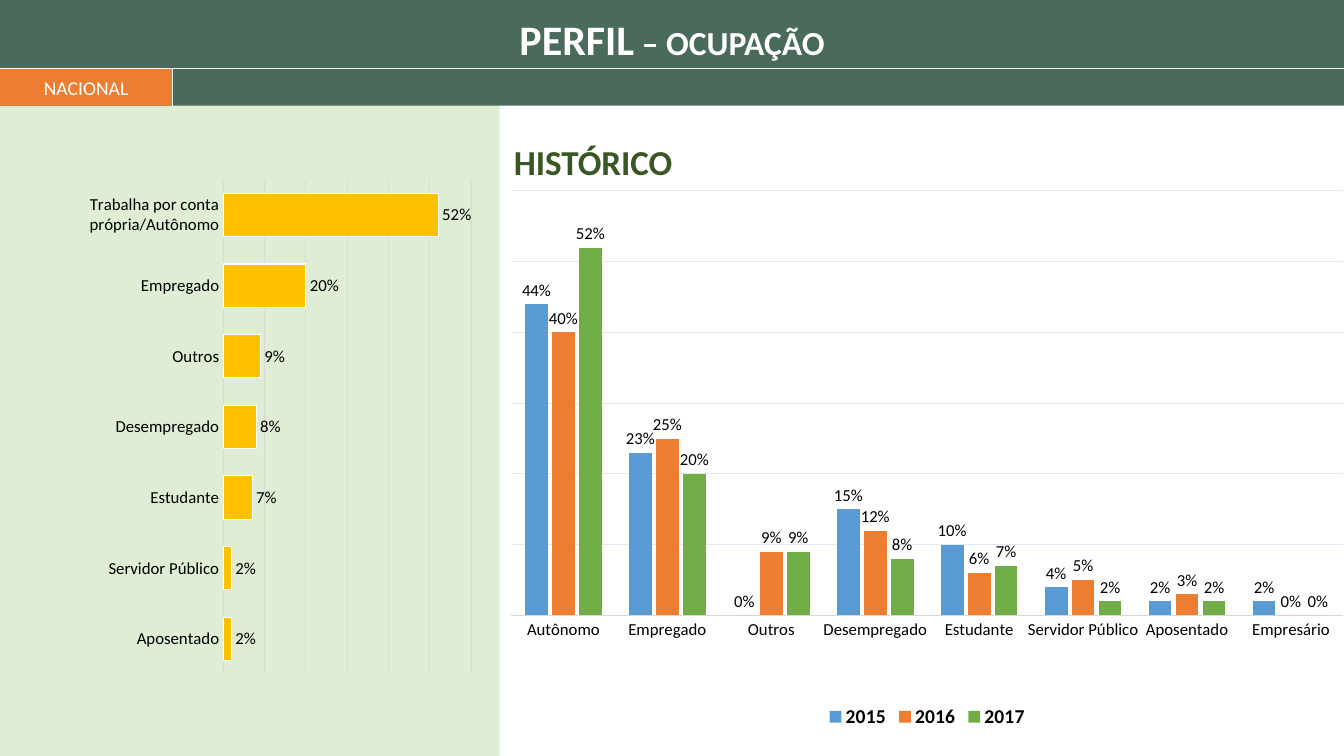
import pptx
import pptx.chart.data
import pptx.dml.color
import pptx.enum.chart
import pptx.enum.shapes
import pptx.enum.text
import pptx.oxml
import pptx.oxml.ns
import pptx.util
import lxml.etree

Pt = pptx.util.Pt
Align = pptx.enum.text.PP_ALIGN
Kind = pptx.enum.chart.XL_CHART_TYPE

TINTS = {
    "panel": "C5E0B4", "band": "4A6A5C", "tag": "ED7D31", "white": "FFFFFF",
    "rule": "F2F2F2", "head": "385723", "black": "000000", "axis": "D9D9D9",
    "grid": "DEEBF7", "gold": "FFC000", "blue": "5B9BD5", "green": "70AD47",
}


class Deck:
    font = "Calibri"

    def __init__(self, width, height):
        self.show = pptx.Presentation()
        self.show.slide_width, self.show.slide_height = Pt(width), Pt(height)
        self.slide = self.show.slides.add_slide(self.show.slide_layouts[6])

    def tint(self, name):
        return pptx.dml.color.RGBColor.from_string(TINTS[name])

    def style(self, font, size, tint, bold=False):
        font.name, font.size, font.bold = self.font, Pt(size), bold
        font.color.rgb = self.tint(tint)

    def fill(self, form, tint):
        form.fill.solid()
        form.fill.fore_color.rgb = self.tint(tint)

    def stroke(self, line, tint, width=0.75):
        line.color.rgb = self.tint(tint)
        line.width = Pt(width)

    def letter(self, frame, parts, tint, align, bold=False):
        para = frame.paragraphs[0]
        para.alignment = align
        for text, size in parts:
            run = para.add_run()
            run.text = text
            self.style(run.font, size, tint, bold)

    def block(self, box, tint, alpha=None):
        rect = self.slide.shapes.add_shape(
            pptx.enum.shapes.MSO_SHAPE.RECTANGLE, *map(Pt, box))
        rect.shadow.inherit = False
        rect.line.fill.background()
        self.fill(rect, tint)
        if alpha:
            color = rect.element.xpath("./p:spPr/a:solidFill/a:srgbClr")[0]
            lxml.etree.SubElement(color, pptx.oxml.ns.qn("a:alpha"), val=str(alpha * 1000))
        return rect

    def label(self, box, parts, tint, align):
        frame = self.slide.shapes.add_textbox(*map(Pt, box)).text_frame
        frame.word_wrap = True
        frame.auto_size = pptx.enum.text.MSO_AUTO_SIZE.SHAPE_TO_FIT_TEXT
        self.letter(frame, parts, tint, align, True)

    def rule(self, ends, tint, width):
        line = self.slide.shapes.add_connector(
            pptx.enum.shapes.MSO_CONNECTOR.STRAIGHT, *map(Pt, ends))
        self.stroke(line.line, tint, width)
        lxml.etree.SubElement(line.element.spPr, pptx.oxml.ns.qn("a:effectLst"))

    def chart(self, kind, box, groups, rows, gap, lap, grid, area, edge=None):
        data = pptx.chart.data.CategoryChartData(number_format="0%")
        data.categories = groups
        for name, tint, values in rows:
            data.add_series(name, values)
        chart = self.slide.shapes.add_chart(kind, *map(Pt, box), data).chart
        chart.has_title = False
        chart.has_legend = False
        self.style(chart.font, 10, "black")

        plot = chart.plots[0]
        plot.gap_width, plot.overlap, plot.vary_by_categories = gap, lap, False
        for bars, (name, tint, values) in zip(plot.series, rows):
            self.fill(bars.format, tint)
            bars.invert_if_negative = False
            if edge:
                self.stroke(bars.format.line, edge)
            marks = bars.data_labels
            marks.show_value = True
            marks.number_format, marks.number_format_is_linked = "0%", False
            marks.position = pptx.enum.chart.XL_LABEL_POSITION.OUTSIDE_END
            self.style(marks.font, 12, "black")

        names, scale = chart.category_axis, chart.value_axis
        names.major_tick_mark = pptx.enum.chart.XL_TICK_MARK.NONE
        names.has_major_gridlines = False
        self.style(names.tick_labels.font, 12, "black")
        self.stroke(names.format.line, "axis")
        scale.minimum_scale, scale.maximum_scale, scale.major_unit = 0, 0.6, 0.1
        scale.has_major_gridlines = True
        self.stroke(scale.major_gridlines.format.line, grid)
        scale.tick_labels.number_format = "0%"
        scale.tick_labels.number_format_is_linked = False
        scale.visible = False
        self.place(chart, area)
        return chart

    def place(self, chart, area):
        root = chart.element.xpath("//c:plotArea")[0]
        for old in root.xpath("./c:layout"):
            root.remove(old)
        pairs = [("layoutTarget", "inner"), ("xMode", "edge"), ("yMode", "edge")]
        pairs += zip("xywh", area)
        inner = "".join(f'<c:{tag} val="{value}"/>' for tag, value in pairs)
        root.insert(0, pptx.oxml.parse_xml(
            f'<c:layout {pptx.oxml.ns.nsdecls("c")}>'
            f"<c:manualLayout>{inner}</c:manualLayout></c:layout>"))

    def legend(self, chart):
        chart.has_legend = True
        chart.legend.position = pptx.enum.chart.XL_LEGEND_POSITION.BOTTOM
        chart.legend.include_in_layout = False
        self.style(chart.legend.font, 14, "black", True)


def main():
    wide, high, band, split, tag = 960, 540, 75.5, 49, 123
    deck = Deck(wide, high)
    deck.block((0, 0, 357, high), "panel", 56)
    deck.block((0, 0, wide, band), "band")
    deck.label((0, 6, wide, 44), [("PERFIL", 30), (" – OCUPAÇÃO", 24)],
               "white", Align.CENTER)
    badge = deck.block((0, split, tag, band - split), "tag").text_frame
    badge.vertical_anchor = pptx.enum.text.MSO_ANCHOR.MIDDLE
    deck.letter(badge, [("NACIONAL", 14)], "white", Align.CENTER)
    deck.rule((tag, band, tag, split), "white", 0.5)
    deck.rule((0, split, wide, split), "rule", 1)

    jobs = ["Empregado", "Outros", "Desempregado", "Estudante",
            "Servidor Público", "Aposentado"]
    latest = [0.52, 0.2, 0.09, 0.08, 0.07, 0.02, 0.02]
    share = deck.chart(
        Kind.BAR_CLUSTERED, (15, 121, 328.3, 368),
        ["Trabalha por conta própria/Autônomo"] + jobs,
        [("Series 1", "gold", latest)],
        63, -70, "axis", (0.44, 0.02, 0.54, 0.96), "white")
    share.category_axis.reverse_order = True

    deck.label((360, 96.5, 511, 37.5), [("HISTÓRICO", 25)], "head", Align.LEFT)
    past = deck.chart(
        Kind.COLUMN_CLUSTERED, (365, 124.5, 594.7, 399),
        ["Autônomo"] + jobs + ["Empresário"],
        [("2015", "blue", [0.44, 0.23, 0, 0.15, 0.1, 0.04, 0.02, 0.02]),
         ("2016", "tag", [0.4, 0.25, 0.09, 0.12, 0.06, 0.05, 0.03, 0]),
         ("2017", "green", latest + [0])],
        121, -19, "grid", (0, 0.03, 1, 0.76))
    deck.legend(past)
    deck.show.save("out.pptx")


if __name__ == "__main__":
    main()
